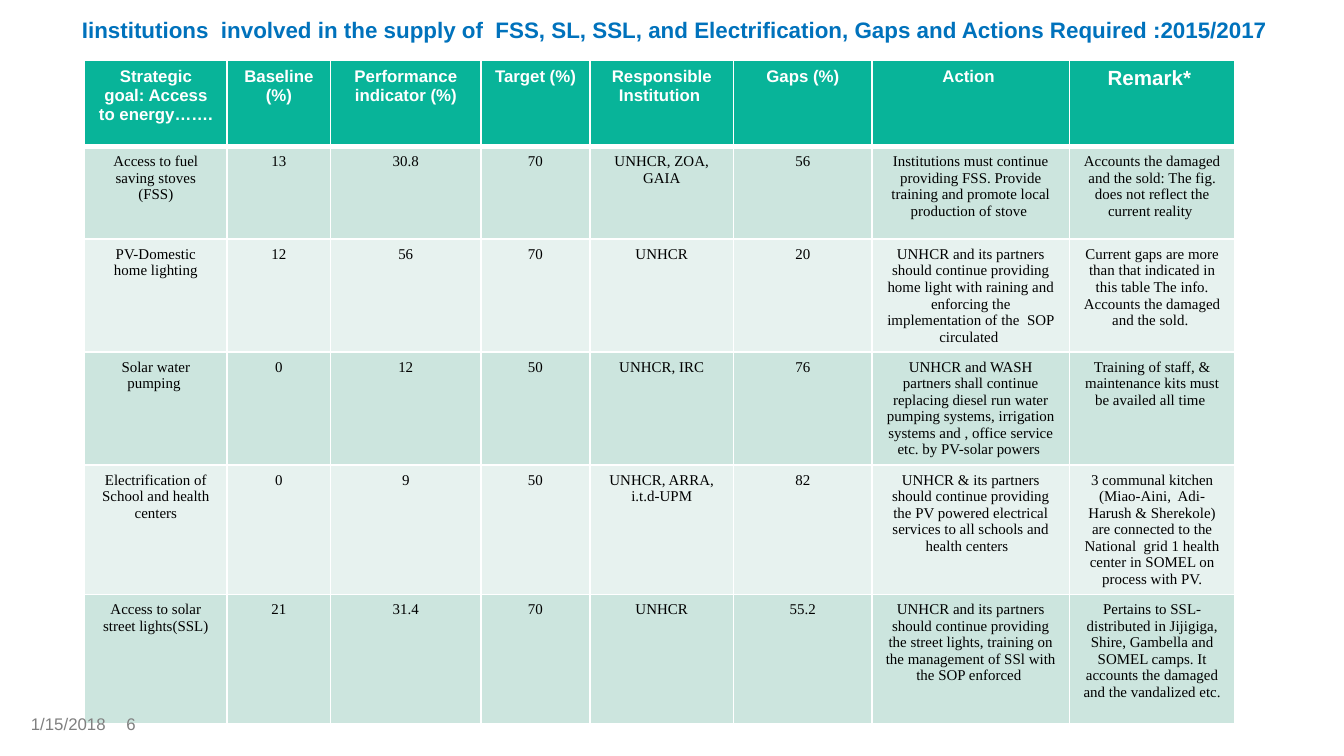
from lxml.etree import SubElement
from pptx import Presentation
from pptx.dml.color import RGBColor
from pptx.enum.text import MSO_ANCHOR, MSO_AUTO_SIZE, PP_ALIGN
from pptx.oxml.ns import qn
from pptx.util import Inches, Pt

# Content
TITLE = [
    (" ", 14),
    ("Iinstitutions  involved in the supply of  FSS, SL, SSL, and Electrification, "
     "Gaps and Actions Required :2015/2017 ", 12),
]
HEADERS = ["Strategic\ngoal: Access to energy……. ", "Baseline (%)",
           "Performance indicator (%)", "Target (%)", "Responsible Institution ",
           "Gaps (%)", "Action ", "Remark* "]
GOALS = [
    ("Access to fuel saving stoves (FSS)", "13", "30.8", "70", "UNHCR, ZOA, GAIA", "56",
     "Institutions must continue providing FSS. Provide training and promote local "
     "production of stove ",
     "Accounts the damaged and the sold: The fig. does not reflect the current reality "),
    ("PV-Domestic home lighting", "12", "56", "70", "UNHCR", "20",
     "UNHCR and its partners should continue providing home light with raining and "
     "enforcing the implementation of the  SOP circulated ",
     "Current gaps are more than that indicated in this table The info. Accounts the "
     "damaged and the sold. "),
    ("Solar water pumping ", "0", "12", "50", "UNHCR, IRC", "76",
     "UNHCR and WASH partners shall continue replacing diesel run water pumping systems, "
     "irrigation systems and , office service etc. by PV-solar powers ",
     "Training of staff, & maintenance kits must be availed all time "),
    ("Electrification of School and health centers", "0", "9", "50",
     "UNHCR, ARRA, i.t.d-UPM", "82",
     "UNHCR & its partners should continue providing the PV powered electrical services "
     "to all schools and health centers  ",
     "3 communal kitchen (Miao-Aini,  Adi-Harush & Sherekole) are connected to the "
     "National  grid 1 health center in SOMEL on process with PV."),
    ("Access to solar street lights(SSL)", "21", "31.4", "70", "UNHCR", "55.2",
     "UNHCR and its partners should continue providing the street lights, training on "
     "the management of SSl with the SOP enforced ",
     "Pertains to SSL-distributed in Jijigiga, Shire, Gambella and SOMEL camps. It "
     "accounts the damaged and the vandalized etc.  "),
]
FOOTERS = [("1/15/2018", 0.23, 0.71), ("6", 0.94, 0.5)]

SLIDE_WIDTH = 10
COLUMN_WIDTHS = [1.06, 0.77, 1.12, 0.81, 1.07, 1.03, 1.47, 1.23]
ROW_HEIGHTS = [0.64, 0.69, 0.84, 0.84, 0.96, 0.96]
COLORS = {"title": "0072BC", "header": "08B499", "odd": "CCE5DE", "even": "E7F2EF",
          "white": "FFFFFF", "body": "000000", "footer": "808080"}


def color(name):
    return RGBColor.from_string(COLORS[name])


def add_run(paragraph, text, size, color_name, font="Arial", bold=False):
    run = paragraph.add_run()
    run.text = text
    run.font.name = font
    run.font.size = Pt(size)
    run.font.bold = bold
    run.font.color.rgb = color(color_name)


def clear_margins(frame):
    frame.margin_left = frame.margin_right = frame.margin_top = frame.margin_bottom = 0


def set_borders(cell, top, bottom):
    properties = cell._tc.get_or_add_tcPr()
    sides = [("L", 1), ("R", 1), ("T", top), ("B", bottom)]
    for position, (side, width) in enumerate(sides):
        line = SubElement(properties, qn(f"a:ln{side}"), w=str(Pt(width)))
        fill = SubElement(line, qn("a:solidFill"))
        SubElement(fill, qn("a:srgbClr"), val=COLORS["white"])
        properties.insert(position, line)


def fill_cell(cell, text, row, column):
    is_header = row == 0
    cell.fill.solid()
    cell.fill.fore_color.rgb = color("header" if is_header else "odd" if row % 2 else "even")
    set_borders(cell, top=3 if row == 1 else 1, bottom=3 if is_header else 1)
    frame = cell.text_frame
    for index, line in enumerate(text.split("\n")):
        paragraph = frame.add_paragraph() if index else frame.paragraphs[0]
        paragraph.alignment = PP_ALIGN.CENTER
        if is_header:
            size = 11 if column == len(HEADERS) - 1 else 9
            add_run(paragraph, line, size, "white", bold=True)
        else:
            add_run(paragraph, line, 8, "body", font="Times New Roman")


# Widescreen slide, 16:9
presentation = Presentation()
presentation.slide_width = Inches(SLIDE_WIDTH)
presentation.slide_height = Inches(SLIDE_WIDTH * 9 / 16)
slide = presentation.slides.add_slide(presentation.slide_layouts[5])

# Title
title = slide.shapes.title
title.left, title.top = Inches(0.23), Inches(0.03)
title.width, title.height = Inches(9.58), Inches(0.3)
title_frame = title.text_frame
title_frame.auto_size = MSO_AUTO_SIZE.NONE
title_frame.word_wrap = True
title_frame.vertical_anchor = MSO_ANCHOR.BOTTOM
clear_margins(title_frame)
heading = title_frame.paragraphs[0]
heading.alignment = PP_ALIGN.CENTER
heading.line_spacing = 0.9
for text, size in TITLE:
    add_run(heading, text, size, "title", bold=True)

# Table of goals
rows = [HEADERS, *GOALS]
goal_table = slide.shapes.add_table(
    len(rows), len(HEADERS), Inches(0.63), Inches(0.45),
    Inches(sum(COLUMN_WIDTHS)), Inches(sum(ROW_HEIGHTS))).table
for column, width in zip(goal_table.columns, COLUMN_WIDTHS):
    column.width = Inches(width)
for row, height in zip(goal_table.rows, ROW_HEIGHTS):
    row.height = Inches(height)
for row_index, texts in enumerate(rows):
    for column_index, text in enumerate(texts):
        fill_cell(goal_table.cell(row_index, column_index), text, row_index, column_index)

# Date and slide number
for text, left, width in FOOTERS:
    footer = slide.shapes.add_textbox(Inches(left), Inches(5.31), Inches(width), Inches(0.17))
    footer_frame = footer.text_frame
    footer_frame.word_wrap = True
    clear_margins(footer_frame)
    add_run(footer_frame.paragraphs[0], text, 9, "footer")

presentation.save("out.pptx")
